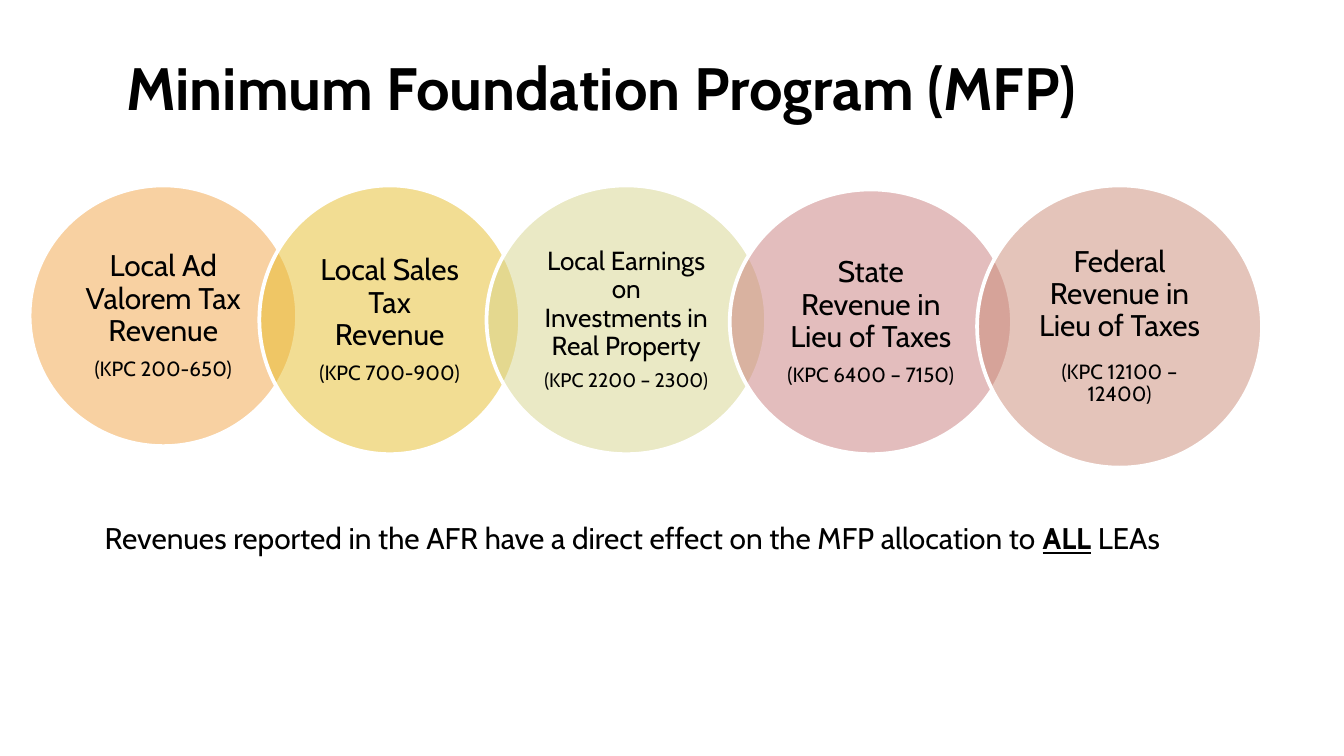
from lxml.etree import SubElement
from pptx import Presentation
from pptx.dml.color import RGBColor
from pptx.enum.shapes import MSO_SHAPE as Preset
from pptx.enum.text import MSO_ANCHOR as Anchor, MSO_AUTO_SIZE as AutoSize, PP_ALIGN as Align
from pptx.oxml.ns import qn
from pptx.util import Inches, Pt

SLIDE_WIDTH = Inches(10)
SLIDE_HEIGHT = SLIDE_WIDTH * 9 // 16
GRID = SLIDE_WIDTH / 100
FONT = "Cabin"
BLACK = RGBColor(0x00, 0x00, 0x00)
WHITE = RGBColor(0xFF, 0xFF, 0xFF)
ORANGE = RGBColor(0xF3, 0xA4, 0x47)
GOLD = RGBColor(0xE7, 0xBC, 0x29)
OLIVE = RGBColor(0xD7, 0xD5, 0x8D)
ROSE = RGBColor(0xC9, 0x7D, 0x7D)
CLAY = RGBColor(0xCB, 0x8B, 0x77)

TITLE_BOX = (8.4, 3.3, 80.5, 6.4)
NOTE_BOX = (2.2, 38.2, 89.7, 6.4)
REVENUES = [
    ((2.2, 13.8, 19.9, 19.4), ORANGE, "Local Ad Valorem Tax Revenue", "(KPC 200-650)", 16, 11, 5.6),
    ((19.3, 13.8, 19.4, 20), GOLD, "Local Sales Tax Revenue", "(KPC 700-900)", 16, 11, 5.6),
    ((36.2, 13.8, 20.8, 20), OLIVE, "Local Earnings on Investments in Real Property",
     "(KPC 2200 – 2300)", 14, 10.5, 4.9),
    ((54.3, 14.1, 21, 19.7), ROSE, "State Revenue in Lieu of Taxes", "(KPC 6400 – 7150)", 16, 11, 5.6),
    ((72.7, 13.8, 21.2, 21), CLAY, "Federal Revenue in Lieu of Taxes", "(KPC 12100 – 12400)", 16, 11, 10),
]


def place(box):
    return [round(length * GRID) for length in box]


def style(paragraph, size, alignment, bold=False):
    paragraph.alignment = alignment
    font = paragraph.font
    font.name, font.size, font.bold = FONT, Pt(size), bold
    font.color.rgb = BLACK


def add_title(slide, box):
    title = slide.shapes.title
    title.left, title.top, title.width, title.height = place(box)
    frame = title.text_frame
    frame.text = "Minimum Foundation Program (MFP)"
    frame.auto_size = AutoSize.NONE
    frame.vertical_anchor = Anchor.TOP
    style(frame.paragraphs[0], 32, Align.LEFT, bold=True)


def add_revenue(slide, box, color, source, codes, source_size, codes_size, gap):
    circle = slide.shapes.add_shape(Preset.OVAL, *place(box))
    circle.shadow.inherit = False
    circle.fill.solid()
    circle.fill.fore_color.rgb = color
    fill_color = circle._element.spPr.find(f"{qn('a:solidFill')}/{qn('a:srgbClr')}")
    SubElement(fill_color, qn("a:alpha"), val="50000")
    circle.line.color.rgb = WHITE
    circle.line.width = Pt(2)
    frame = circle.text_frame
    frame.word_wrap = True
    frame.vertical_anchor = Anchor.MIDDLE
    frame.margin_left = frame.margin_right = Inches(0.12)
    frame.margin_top = frame.margin_bottom = Inches(0.03)
    frame.text = f"{source}\n{codes}"
    for paragraph, size, space in zip(frame.paragraphs, (source_size, codes_size), (gap, 3.85)):
        style(paragraph, size, Align.CENTER)
        paragraph.line_spacing = 0.9
        paragraph.space_after = Pt(space)


def add_note(slide, box):
    frame = slide.shapes.add_textbox(*place(box)).text_frame
    frame.word_wrap = True
    paragraph = frame.paragraphs[0]
    style(paragraph, 16, Align.CENTER)
    paragraph.add_run().text = "Revenues reported in the AFR have a direct effect on the MFP allocation to "
    emphasis = paragraph.add_run()
    emphasis.text = "ALL"
    emphasis.font.bold = emphasis.font.underline = True
    paragraph.add_run().text = " LEAs"


def main():
    presentation = Presentation()
    presentation.slide_width, presentation.slide_height = SLIDE_WIDTH, SLIDE_HEIGHT
    slide = presentation.slides.add_slide(presentation.slide_layouts[5])
    add_title(slide, TITLE_BOX)
    for revenue in REVENUES:
        add_revenue(slide, *revenue)
    add_note(slide, NOTE_BOX)
    presentation.save("out.pptx")


if __name__ == "__main__":
    main()
